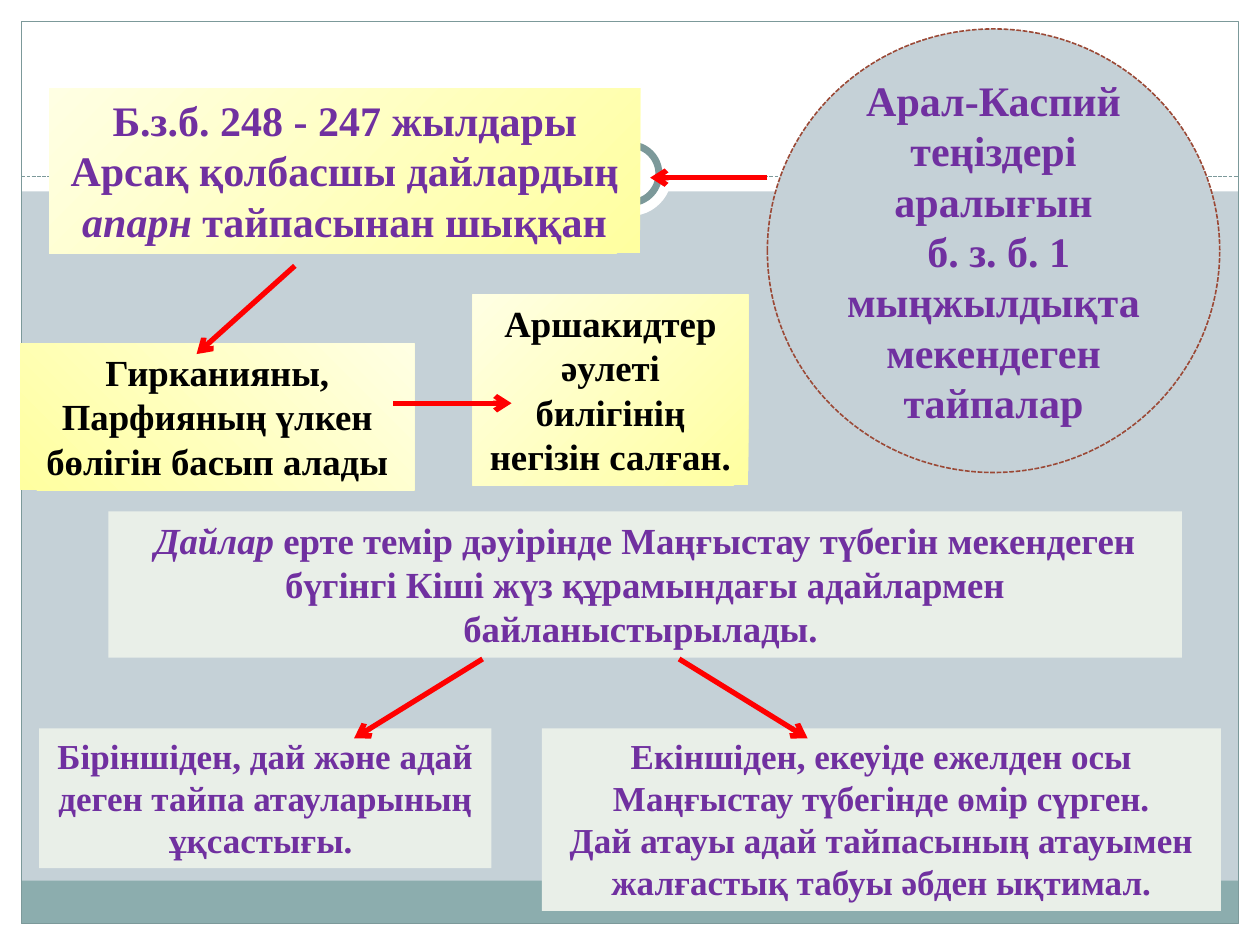
from lxml.etree import SubElement as Sub
from pptx import Presentation
from pptx.dml.color import RGBColor as Rgb
from pptx.enum.dml import MSO_LINE as Dash
from pptx.enum.shapes import MSO_CONNECTOR as Conn, MSO_SHAPE as Kind
from pptx.enum.text import MSO_ANCHOR as Anchor, MSO_AUTO_SIZE as Fit, PP_ALIGN as Align
from pptx.oxml.ns import qn
from pptx.util import Inches, Pt

WHITE = Rgb(0xFF, 0xFF, 0xFF)
BLACK = Rgb(0, 0, 0)
RED = Rgb(0xFF, 0, 0)
PURPLE = Rgb(0x70, 0x30, 0xA0)
MIST = Rgb(0xC5, 0xD1, 0xD7)
TEAL = Rgb(0x8C, 0xAD, 0xAE)
SLATE = Rgb(0x7C, 0x99, 0x9A)
PALE = Rgb(0xE9, 0xEF, 0xE8)
BROWN = Rgb(0x9B, 0x49, 0x36)
YELLOW = Rgb(0xFF, 0xFF, 0xA0)
CREAM = Rgb(0xFF, 0xFF, 0xE3)


def put(obj, form):
    """Set every attribute named in a dict of format values."""
    for name, value in form.items():
        setattr(obj, name, value)


def stroke(line, color, width, dash=None):
    """Give a line its colour, width and dash."""
    line.color.rgb = color
    put(line, {"width": Pt(width), "dash_style": dash})


def block(slide, box, fill=None, line=None, kind=Kind.RECTANGLE):
    """Draw a shape in a box, with a plain fill and an outline if given."""
    shape = slide.shapes.add_shape(kind, *map(Inches, box))
    shape.shadow.inherit = False
    if fill is None:
        shape.fill.background()
    else:
        shape.fill.solid()
        shape.fill.fore_color.rgb = fill
    if line:
        stroke(shape.line, *line)
    else:
        shape.line.fill.background()
    return shape


def rule(slide, start, end, *style):
    """Draw a straight line between two points."""
    line = slide.shapes.add_connector(Conn.STRAIGHT, *map(Inches, start + end))
    Sub(line.element.spPr, qn("a:effectLst"))
    stroke(line.line, *style)
    return line


def arrow(slide, start, end):
    """Draw a red arrow between two points."""
    line = rule(slide, start, end, RED, 3)
    Sub(line.line._get_or_add_ln(), qn("a:tailEnd"), type="arrow")


def glow(shape, angle):
    """Fade a shape from yellow to cream."""
    shape.fill.gradient()
    shape.fill.gradient_angle = angle
    for stop, color in zip(shape.fill.gradient_stops, (YELLOW, CREAM)):
        stop.color.rgb = color


def write(shape, lines, size, color=PURPLE, anchor=Anchor.TOP, fit=Fit.SHAPE_TO_FIT_TEXT):
    """Write centred bold lines; words between stars are italic."""
    frame = shape.text_frame
    put(frame, {"word_wrap": True, "vertical_anchor": anchor, "auto_size": fit})
    for i, text in enumerate(lines):
        para = frame.add_paragraph() if i else frame.paragraphs[0]
        para.alignment = Align.CENTER
        for j, part in enumerate(text.split("*")):
            if part:
                run = para.add_run()
                run.text = part
                put(run.font, {"name": "Times New Roman", "size": Pt(size),
                               "bold": True, "italic": j % 2 == 1})
                run.font.color.rgb = color


def frame(slide, wide, high):
    """Draw the white margins, footer band, border, rule and ring."""
    edge, split = 0.17, 1.4
    inner = wide - 2 * edge
    for box in ((0, high - edge, wide, edge), (0, 0, wide, 1.52),
                (0, 0, edge, high), (wide - edge, 0, edge, high)):
        block(slide, box, WHITE)
    block(slide, (edge, 6.99, inner, 0.34), TEAL)
    block(slide, (edge, edge, inner, high - 2 * edge), line=(SLATE, 0.75))
    rule(slide, (edge, split), (wide - edge, split), SLATE, 0.75, Dash.SQUARE_DOT)
    for size, line in ((0.67, None), (0.46, (SLATE, 4))):
        box = (wide / 2 - size / 2, 1.38 - size / 2, size, size)
        block(slide, box, WHITE, line, Kind.OVAL)


def notes(slide):
    """Place the pale boxes on the lower half."""
    for box, size, lines in (
        ((0.86, 4.06, 8.52, 1.16), 21,
         ["*Дайлар* ерте темір дәуірінде Маңғыстау түбегін мекендеген бүгінгі "
          "Кіші жүз құрамындағы адайлармен байланыстырылады. "]),
        ((0.31, 5.78, 3.59, 1.11), 20,
         ["Біріншіден, дай және адай деген тайпа атауларының ұқсастығы. "]),
        ((4.3, 5.78, 5.39, 1.45), 20,
         ["Екіншіден, екеуіде ежелден осы Маңғыстау түбегінде өмір сүрген.",
          "Дай атауы адай тайпасының атауымен жалғастық табуы әбден ықтимал."]),
    ):
        write(block(slide, box, PALE), lines, size)


def story(slide):
    """Place the yellow boxes on the upper half."""
    for box, angle, size, color, text in (
        ((0.39, 0.7, 4.69, 1.31), 135, 24, PURPLE,
         "Б.з.б. 248 - 247 жылдары Арсақ қолбасшы дайлардың* апарн* тайпасынан шыққан"),
        ((3.75, 2.34, 2.19, 1.51), 135, 21, BLACK,
         "Аршакидтер әулеті билігінің негізін салған."),
        ((0.16, 2.73, 3.13, 1.16), 45, 21, BLACK,
         "Гирканияны, Парфияның үлкен бөлігін басып алады"),
    ):
        shape = block(slide, box)
        glow(shape, angle)
        write(shape, [text], size, color)


def tribes(slide, box):
    """Place the dashed circle about the tribes."""
    shape = block(slide, box, MIST, (BROWN, 0.9, Dash.SQUARE_DOT), Kind.OVAL)
    write(shape, ["Арал-Каспий теңіздері аралығын", " б. з. б. 1 мыңжылдықта",
                  "мекендеген тайпалар"], 24, anchor=Anchor.MIDDLE, fit=Fit.NONE)


def main():
    """Build the slide and save it."""
    wide, high = 10, 7.5
    deck = Presentation()
    put(deck, {"slide_width": Inches(wide), "slide_height": Inches(high)})
    slide = deck.slides.add_slide(deck.slide_layouts[6])
    back = slide.background.fill
    back.solid()
    back.fore_color.rgb = MIST
    frame(slide, wide, high)
    notes(slide)
    story(slide)
    tribes(slide, (6.09, 0.23, 3.59, 3.52))
    for start, end in (((6.09, 1.41), (5.16, 1.41)), ((2.34, 2.11), (1.56, 2.81)),
                       ((3.12, 3.2), (4.06, 3.2)), ((5.39, 5.23), (6.41, 5.86)),
                       ((3.83, 5.23), (2.81, 5.86))):
        arrow(slide, start, end)
    deck.save("out.pptx")


if __name__ == "__main__":
    main()
